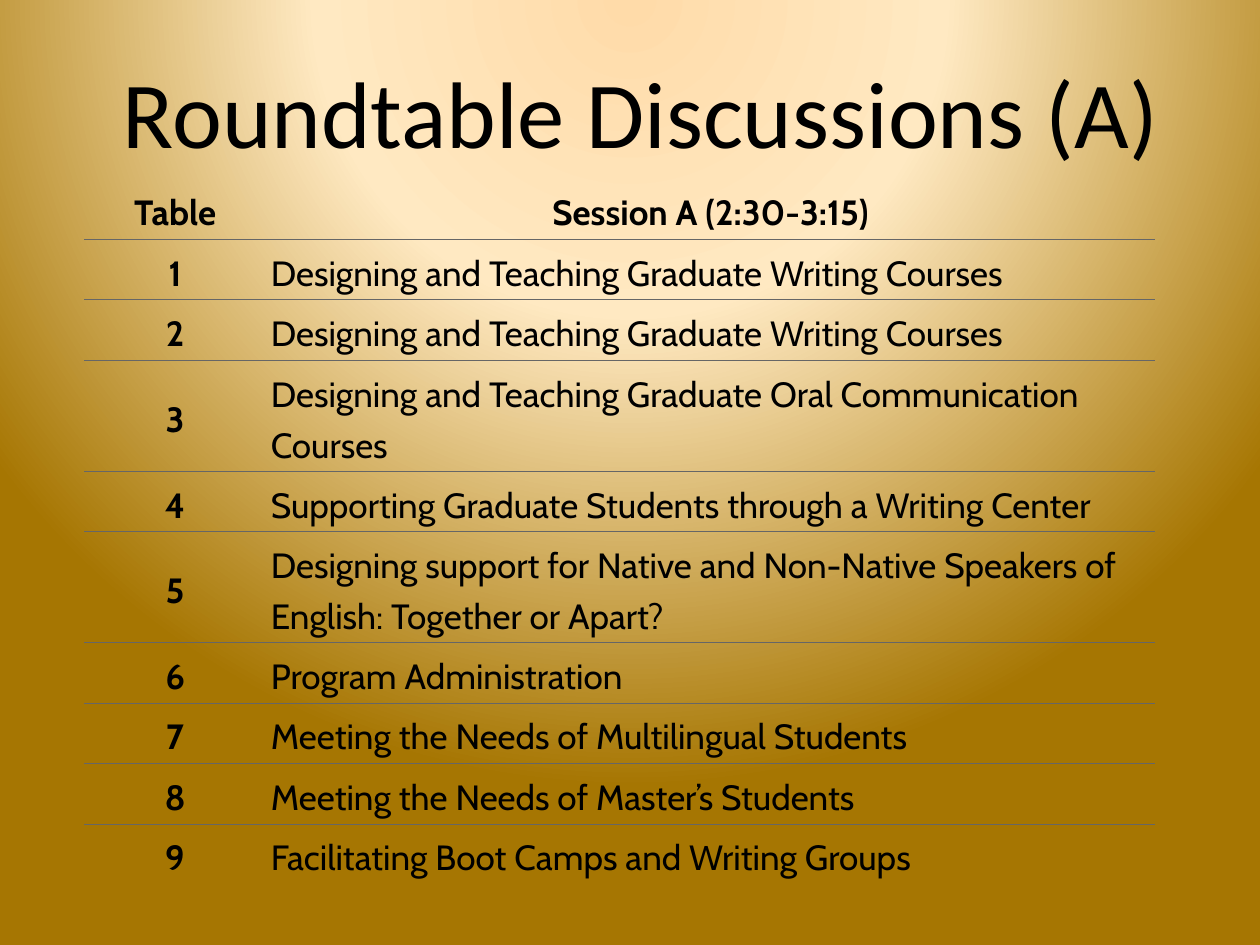
from lxml.etree import SubElement as Sub
from pptx import Presentation
from pptx.dml.color import RGBColor as RGB
from pptx.enum.text import MSO_ANCHOR as Anchor, PP_ALIGN as Align
from pptx.oxml.ns import qn
from pptx.util import Inches, Pt

COLORS = {"text": "000000", "rule": "666666",
          "glow": "FFDBA9", "cream": "FFE9C2", "gold": "A67602"}
STOPS = [(0, "glow"), (40, "cream"), (100, "gold")]
FOCUS = {"l": 50, "t": -80, "r": 50, "b": 180}
PLAIN = "{2D5ABB26-0587-4C30-8999-92F81FD0307C}"  # no style, no grid
HEAD = ("Table", "Session A (2:30-3:15)")
TOPICS = [
    "Designing and Teaching Graduate Writing Courses",
    "Designing and Teaching Graduate Writing Courses",
    "Designing and Teaching Graduate Oral Communication Courses",
    "Supporting Graduate Students through a Writing Center",
    "Designing support for Native and Non-Native Speakers of "
    "English: Together or Apart?",
    "Program Administration",
    "Meeting the Needs of Multilingual Students",
    "Meeting the Needs of Master’s Students",
    "Facilitating Boot Camps and Writing Groups",
]
WIDTHS = (1.44, 7.06)
ROW, TALL = 0.48, 0.88  # one-line and two-line rows
LONG = 55  # characters that fit on one line
TITLE = {"name": "Calibri", "size": Pt(54)}
BODY = {"name": "Cabin", "size": Pt(20)}


def apply(item, values):
    for key, value in values.items():
        setattr(item, key, value)


def write(frame, text, font, align, space=None):
    para = frame.paragraphs[0]
    apply(para, {"alignment": align, "line_spacing": space})
    run = para.add_run()
    run.text = text
    apply(run.font, font)
    run.font.color.rgb = RGB.from_string(COLORS["text"])


def add_color(parent, name):
    Sub(parent, qn("a:srgbClr"), val=COLORS[name])


def paint_back(slide):
    slide.background.fill.gradient()
    grad = slide._element.find(".//" + qn("a:gradFill"))
    for child in list(grad):
        grad.remove(child)
    stops = Sub(grad, qn("a:gsLst"))
    for pos, name in STOPS:
        add_color(Sub(stops, qn("a:gs"), pos=str(pos * 1000)), name)
    shade = Sub(grad, qn("a:path"), path="circle")
    Sub(shade, qn("a:fillToRect"),
        {side: str(pct * 1000) for side, pct in FOCUS.items()})


def add_title(slide, text):
    box = slide.shapes.add_textbox(
        Inches(0.17), Inches(0.25), Inches(9.83), Inches(1.25))
    apply(box.text_frame,
          {"word_wrap": True, "vertical_anchor": Anchor.MIDDLE})
    write(box.text_frame, text, TITLE, Align.CENTER)


def add_rule(cell, side):
    props = cell._tc.get_or_add_tcPr()
    line = Sub(props, qn("a:" + side), w=str(Pt(0.5)))
    add_color(Sub(line, qn("a:solidFill")), "rule")


def fill_cell(cell, text, row, col, last):
    edge = Inches(0.04)
    apply(cell, {"margin_left": edge, "margin_right": edge,
                 "margin_top": edge, "margin_bottom": edge})
    head = row == 0
    label = head or col == 0
    if label and not head:
        cell.vertical_anchor = Anchor.MIDDLE
    write(cell.text_frame, text, {**BODY, "bold": label},
          Align.CENTER if label else Align.LEFT, 1.19)
    # Rules run between rows only
    if not head:
        add_rule(cell, "lnT")
    if row < last:
        add_rule(cell, "lnB")
    cell.fill.background()


def add_sessions(slide):
    rows = [HEAD] + [(str(num), topic) for num, topic in enumerate(TOPICS, 1)]
    highs = [TALL if len(topic) > LONG else ROW for _, topic in rows]
    table = slide.shapes.add_table(
        len(rows), len(WIDTHS), Inches(0.67), Inches(1.42),
        Inches(sum(WIDTHS)), Inches(sum(highs))).table
    table.horz_banding = False
    table._tbl.tblPr.find(qn("a:tableStyleId")).text = PLAIN
    for column, width in zip(table.columns, WIDTHS):
        column.width = Inches(width)
    for row, (texts, high) in enumerate(zip(rows, highs)):
        table.rows[row].height = Inches(high)
        for col, text in enumerate(texts):
            fill_cell(table.cell(row, col), text, row, col, len(rows) - 1)


def main():
    deck = Presentation()
    apply(deck, {"slide_width": Inches(10), "slide_height": Inches(7.5)})
    slide = deck.slides.add_slide(deck.slide_layouts[6])
    # Background, heading, session list
    paint_back(slide)
    add_title(slide, "Roundtable Discussions (A)")
    add_sessions(slide)
    deck.save("out.pptx")


if __name__ == "__main__":
    main()
